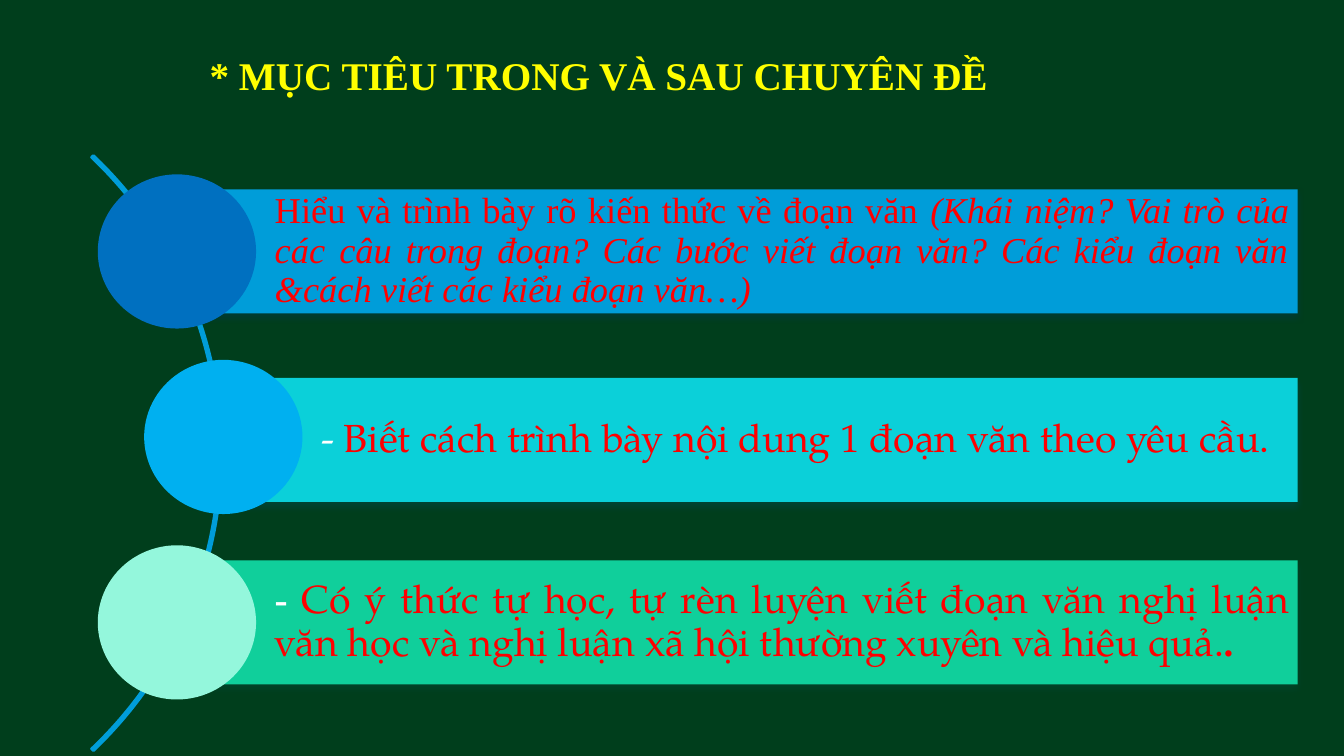
from lxml import etree
from pptx import Presentation
from pptx.dml.color import RGBColor
from pptx.enum.shapes import MSO_SHAPE
from pptx.enum.text import MSO_ANCHOR, MSO_AUTO_SIZE, PP_ALIGN
from pptx.oxml.ns import qn
from pptx.util import Inches, Pt

RECTANGLE, OVAL, ARC = MSO_SHAPE.RECTANGLE, MSO_SHAPE.OVAL, MSO_SHAPE.BLOCK_ARC
MIDDLE = MSO_ANCHOR.MIDDLE
GROW = MSO_AUTO_SIZE.SHAPE_TO_FIT_TEXT
LEFT, JUSTIFY = PP_ALIGN.LEFT, PP_ALIGN.JUSTIFY

FOREST = RGBColor(0x00, 0x3E, 0x1C)
YELLOW = RGBColor(0xFF, 0xFF, 0x00)
RED = RGBColor(0xFF, 0x00, 0x00)
WHITE = RGBColor(0xFF, 0xFF, 0xFF)
BLUE = RGBColor(0x00, 0x9D, 0xD9)
CYAN = RGBColor(0x0B, 0xD0, 0xD9)
GREEN = RGBColor(0x10, 0xCF, 0x9B)
DEEP_BLUE = RGBColor(0x00, 0x70, 0xC0)
SKY = RGBColor(0x00, 0xB0, 0xF0)
MINT = RGBColor(0x94, 0xF7, 0xDC)
BLUE_SHADE = RGBColor(0x00, 0x37, 0x4C)
CYAN_SHADE = RGBColor(0x02, 0x4B, 0x4E)
GREEN_SHADE = RGBColor(0x04, 0x4A, 0x37)

TIMES, PAGELLA = "Times New Roman", "TeX Gyre Pagella"

CIRCLE_WIDTH, CIRCLE_HEIGHT = 1.57, 1.53
BANNER_HEIGHT = 1.23

GOALS = [
    dict(indent=0, drop=0, fill=BLUE, shade=BLUE_SHADE, dot=DEEP_BLUE,
         align=JUSTIFY, spans=[
             ("Hiểu và trình bày rõ kiến thức về đoạn văn ",
              dict(size=26, font=TIMES, color=RED)),
             ("(Khái niệm? Vai trò của các câu trong đoạn? Các bước viết "
              "đoạn văn? Các kiểu đoạn văn &cách viết các kiểu đoạn văn…)",
              dict(size=26, font=TIMES, color=RED, italic=True))]),
    dict(indent=0.46, drop=0.03, fill=CYAN, shade=CYAN_SHADE, dot=SKY,
         align=LEFT, spans=[
             ("- ", dict(font=PAGELLA, color=WHITE)),
             ("Biết cách trình bày nội dung 1 đoạn văn theo yêu cầu.",
              dict(font=PAGELLA, color=RED))]),
    dict(indent=0, drop=0, fill=GREEN, shade=GREEN_SHADE, dot=MINT,
         align=JUSTIFY, spans=[
             ("- ", dict(font=TIMES, color=WHITE, bold=True)),
             ("Có ý thức tự học, tự rèn luyện viết đoạn văn nghị luận văn học "
              "và nghị luận xã hội thường xuyên và hiệu quả.",
              dict(font=PAGELLA, color=RED)),
             (".", dict(font=TIMES, color=RED, bold=True))]),
]


def add_span(para, text, font, color, size=28, bold=False, italic=False):
    span = para.add_run()
    span.text = text
    span.font.name = font
    span.font.size = Pt(size)
    span.font.color.rgb = color
    span.font.bold = bold
    span.font.italic = italic


def add_filled(page, kind, left, top, width, height, color):
    shape = page.shapes.add_shape(
        kind, Inches(left), Inches(top), Inches(width), Inches(height))
    shape.shadow.inherit = False
    shape.fill.solid()
    shape.fill.fore_color.rgb = color
    shape.line.fill.background()
    return shape


def add_shadow(shape, color):
    effects = shape.element.spPr.find(qn("a:effectLst"))
    outer = etree.SubElement(
        effects, qn("a:outerShdw"), blurRad=str(Pt(4.5)), dist=str(Pt(3)),
        dir="5400000", rotWithShape="0")
    tone = etree.SubElement(outer, qn("a:srgbClr"), val=str(color))
    etree.SubElement(tone, qn("a:alpha"), val="48000")


def add_title(page, left, top, width, height):
    box = page.shapes.add_textbox(
        Inches(left), Inches(top), Inches(width), Inches(height))
    frame = box.text_frame
    frame.word_wrap = True
    frame.auto_size = GROW
    para = frame.paragraphs[0]
    para.space_before = Pt(4)
    add_span(para, "* MỤC TIÊU TRONG VÀ SAU CHUYÊN ĐỀ",
             font=TIMES, color=YELLOW, bold=True)


def add_curve(page, left, top, width, height):
    curve = page.shapes.add_shape(
        ARC, Inches(left), Inches(top), Inches(width), Inches(height))
    curve.shadow.inherit = False
    for index, value in enumerate((189, 27, 0.003)):
        curve.adjustments[index] = value
    curve.fill.background()
    curve.line.color.rgb = BLUE
    curve.line.width = Pt(2)


def add_goal(page, left, top, right, goal):
    left += goal["indent"]
    banner_left = left + CIRCLE_WIDTH / 2
    banner_top = top + (CIRCLE_HEIGHT - BANNER_HEIGHT) / 2 + goal["drop"]
    banner = add_filled(page, RECTANGLE, banner_left, banner_top,
                        right - banner_left, BANNER_HEIGHT, goal["fill"])
    add_shadow(banner, goal["shade"])
    frame = banner.text_frame
    frame.word_wrap = True
    frame.vertical_anchor = MIDDLE
    frame.margin_left = Inches(0.97)
    frame.margin_top = frame.margin_right = frame.margin_bottom = Inches(0.08)
    para = frame.paragraphs[0]
    para.alignment = goal["align"]
    para.line_spacing = 0.9
    for text, style in goal["spans"]:
        add_span(para, text, **style)
    add_filled(page, OVAL, left, top, CIRCLE_WIDTH, CIRCLE_HEIGHT, goal["dot"])


def add_goals(page, left, top, right, step):
    for index, goal in enumerate(GOALS):
        add_goal(page, left, top + index * step, right, goal)


def main():
    deck = Presentation()
    deck.slide_width, deck.slide_height = Inches(13.33), Inches(7.5)
    page = deck.slides.add_slide(deck.slide_layouts[6])
    page.background.fill.solid()
    page.background.fill.fore_color.rgb = FOREST
    add_title(page, 1.98, 0.46, 11.35, 0.57)
    add_curve(page, -6.25, 0.37, 8.45, 8.25)
    add_goals(page, 0.97, 1.73, 12.87, step=1.84)
    deck.save("out.pptx")


if __name__ == "__main__":
    main()
